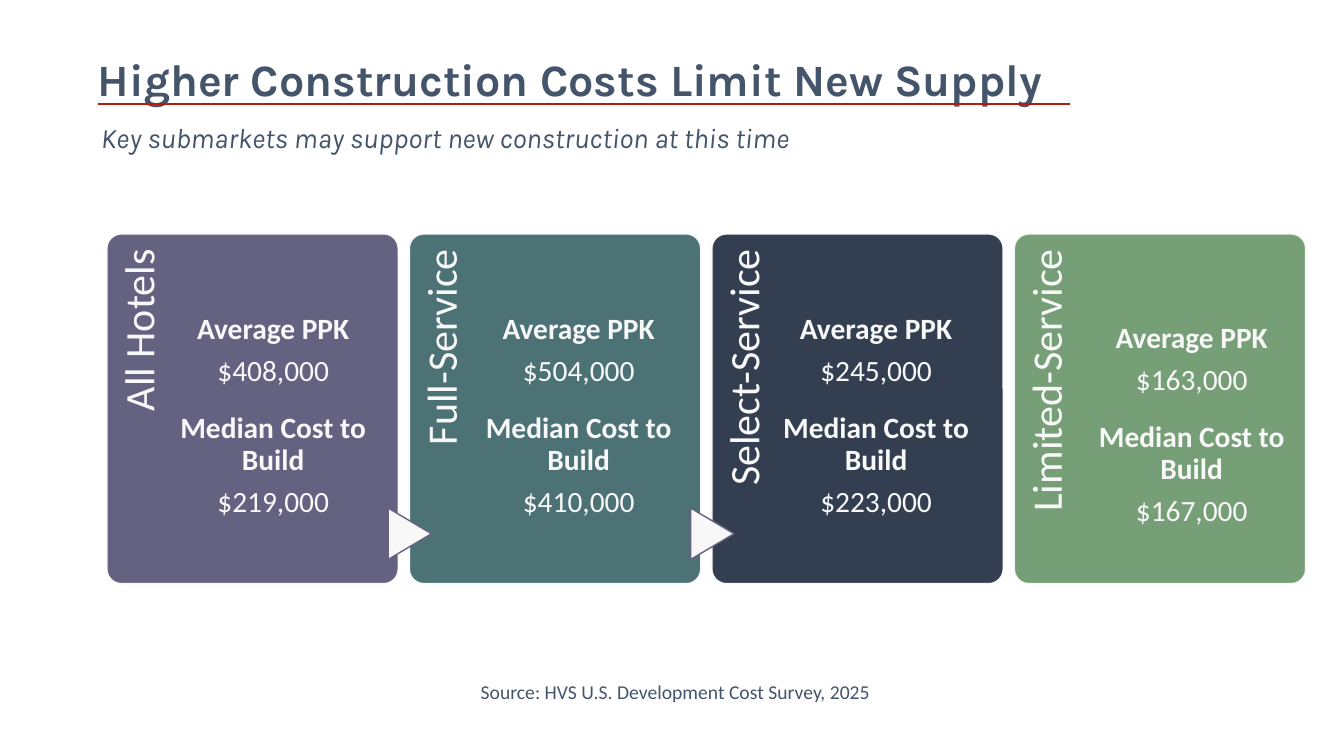
"""Build a slide comparing hotel prices per key with costs to build."""
import pptx
import pptx.util
import pptx.dml.color
import pptx.enum.shapes
import pptx.enum.text
import pptx.oxml
import pptx.oxml.ns

RGBColor = pptx.dml.color.RGBColor
SHAPE = pptx.enum.shapes.MSO_SHAPE
ALIGN = pptx.enum.text.PP_ALIGN
ANCHOR = pptx.enum.text.MSO_ANCHOR

SLATE = RGBColor(0x44, 0x54, 0x6A)
RED = RGBColor(0xB1, 0x1C, 0x11)
PALE = RGBColor(0xF8, 0xF8, 0xF8)
PURPLE = RGBColor(0x65, 0x61, 0x81)
TEAL = RGBColor(0x4C, 0x72, 0x75)
NAVY = RGBColor(0x33, 0x3F, 0x50)
GREEN = RGBColor(0x76, 0x9E, 0x77)

EMU_PER_PX = 9144
CARD_STEP = 300
CARDS = [
    ("All Hotels", PURPLE, "$408,000", "$219,000", 163, 304),
    ("Full-Service", TEAL, "$504,000", "$410,000", 466, 304),
    ("Select-Service", NAVY, "$245,000", "$223,000", 761, 304),
    ("Limited-Service", GREEN, "$163,000", "$167,000", 1074, 313),
]


def px(*lengths):
    """Turn pixel lengths into a list of EMU lengths."""
    return [pptx.util.Emu(n * EMU_PER_PX) for n in lengths]


def set_margins(tf, *margins):
    """Set the left, top, right and bottom insets in pixels."""
    (tf.margin_left, tf.margin_top,
     tf.margin_right, tf.margin_bottom) = px(*margins)


def format_paragraph(p, size, color, font="Calibri", bold=False, italic=False,
                     align=ALIGN.LEFT, spacing=0.9, after=0):
    """Format a paragraph and all its runs."""
    p.alignment = align
    p.line_spacing = spacing
    p.space_before = pptx.util.Pt(0)
    p.space_after = pptx.util.Pt(after)
    for r in p.runs:
        r.font.name = font
        r.font.size = pptx.util.Pt(size)
        r.font.bold = bold
        r.font.italic = italic
        r.font.color.rgb = color


def fill_placeholder(sp, text, box, margins, anchor):
    """Move a placeholder, set its text and return its paragraph."""
    sp.left, sp.top, sp.width, sp.height = px(*box)
    tf = sp.text_frame
    tf.text = text
    tf.word_wrap = True
    tf.auto_size = pptx.enum.text.MSO_AUTO_SIZE.NONE
    tf.vertical_anchor = anchor
    set_margins(tf, *margins)
    p = tf.paragraphs[0]
    pPr = p._p.get_or_add_pPr()
    pPr.set("marL", "0")
    pPr.set("indent", "0")
    pPr.append(pptx.oxml.parse_xml(
        "<a:buNone %s/>" % pptx.oxml.ns.nsdecls("a")))
    return p


def add_rule(s, x1, x2, y):
    """Draw the horizontal line under the heading."""
    line = s.shapes.add_connector(
        pptx.enum.shapes.MSO_CONNECTOR.STRAIGHT, *px(x1, y, x2, y))
    line.line.color.rgb = RED
    line.line.width = pptx.util.Pt(1)
    line._element.spPr.append(pptx.oxml.parse_xml(
        "<a:effectLst %s/>" % pptx.oxml.ns.nsdecls("a")))


def add_plain_shape(s, kind, box, fill, line, rotation):
    """Add a rotated preset shape with a flat fill and a thin outline."""
    sp = s.shapes.add_shape(kind, *px(*box))
    sp.shadow.inherit = False
    sp.rotation = rotation
    sp.fill.solid()
    sp.fill.fore_color.rgb = fill
    sp.line.color.rgb = line
    sp.line.width = pptx.util.Pt(1)
    return sp


def add_card(s, left, label, fill):
    """Add a rounded card whose label reads upwards."""
    sp = add_plain_shape(s, SHAPE.ROUNDED_RECTANGLE, (left, 261, 347, 289),
                         fill, PALE, 270)
    sp.adjustments[0] = 0.05
    tf = sp.text_frame
    tf.text = label
    tf.word_wrap = True
    tf.vertical_anchor = ANCHOR.TOP
    set_margins(tf, 59, 7, 11, 228)
    format_paragraph(tf.paragraphs[0], 30, PALE, align=ALIGN.RIGHT)


def add_text_box(s, box, lines):
    """Add a wrapping text box and return its paragraphs."""
    tf = s.shapes.add_textbox(*px(*box)).text_frame
    tf.word_wrap = True
    tf.text = "\n".join(lines)
    return tf


def add_figures(s, left, top, price, cost):
    """Add the price per key and the cost to build of one card."""
    tf = add_text_box(s, (left, top, 216, 240),
                      ["Average PPK", price, "Median Cost to Build", cost])
    set_margins(tf, 0, 8, 0, 0)
    for i, p in enumerate(tf.paragraphs):
        format_paragraph(p, 21, PALE, bold=i % 2 == 0, align=ALIGN.CENTER,
                         after=18 if i == 1 else 7.35)


def main():
    """Build and save the slide."""
    prs = pptx.Presentation()
    prs.slide_width, prs.slide_height = px(1333, 750)
    s = prs.slides.add_slide(prs.slide_layouts[1])

    p = fill_placeholder(s.shapes.title,
                         "Higher Construction Costs Limit New Supply",
                         (81, 28, 1111, 70), (16, 10, 10, 10), ANCHOR.TOP)
    format_paragraph(p, 32, SLATE, "Karla", bold=True, spacing=1.25)
    p = fill_placeholder(s.placeholders[1],
                         "Key submarkets may support new construction at this time",
                         (90, 106, 1150, 65), (10, 5, 10, 5), ANCHOR.MIDDLE)
    format_paragraph(p, 20, SLATE, "Karla", italic=True)
    add_rule(s, 97, 1061, 103)

    for i, (label, fill, price, cost, left, top) in enumerate(CARDS):
        add_card(s, 77 + i * CARD_STEP, label, fill)
        add_figures(s, left, top, price, cost)
    for i in range(2):
        add_plain_shape(s, SHAPE.FLOWCHART_EXTRACT,
                        (381 + i * CARD_STEP, 508, 51, 43), PALE, PURPLE, 90)

    tf = add_text_box(s, (362, 670, 616, 34),
                      ["Source: HVS U.S. Development Cost Survey, 2025"])
    format_paragraph(tf.paragraphs[0], 14, SLATE, align=ALIGN.CENTER, spacing=1.0)
    prs.save("out.pptx")


if __name__ == "__main__":
    main()
